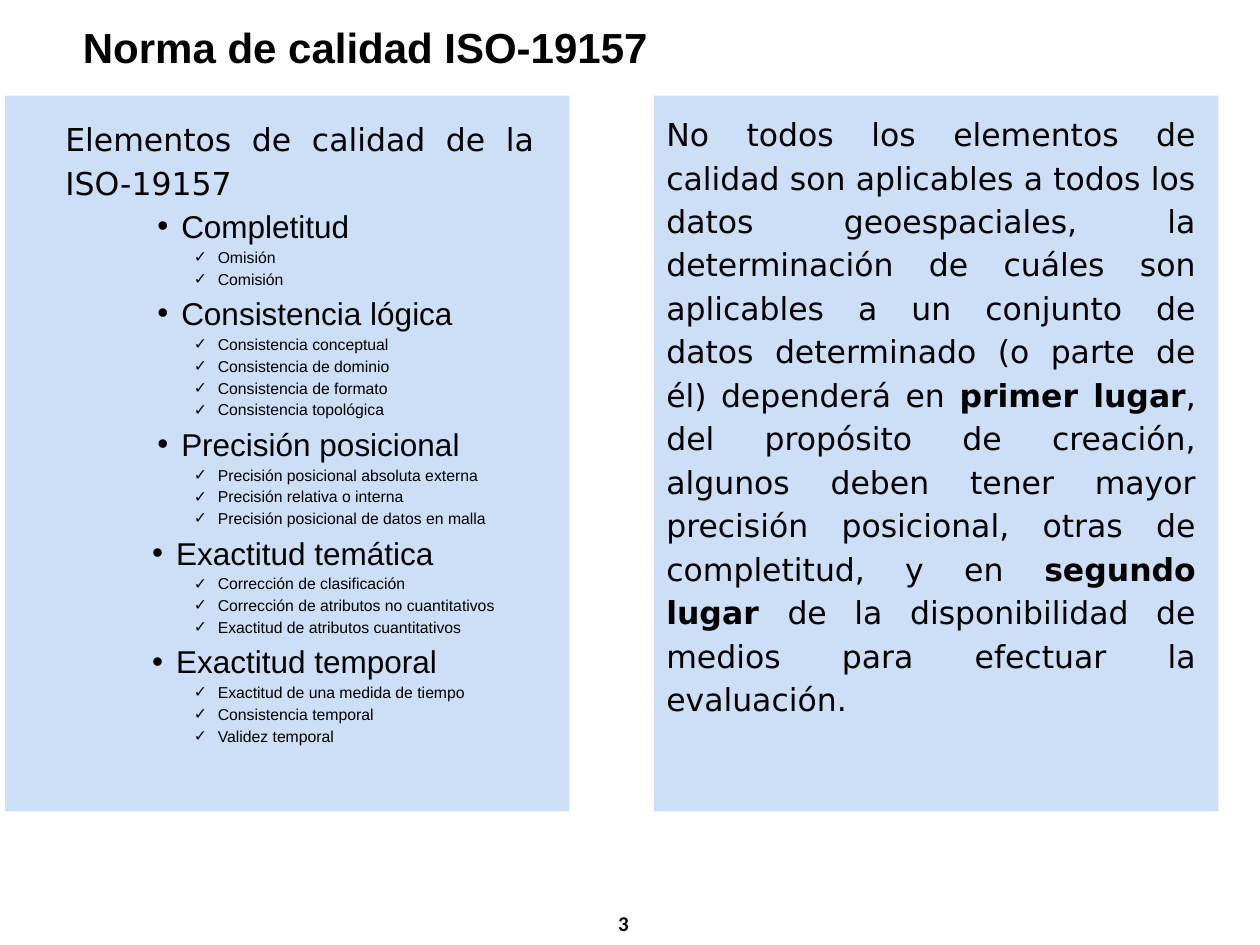
import pptx
import pptx.util
import pptx.dml.color
import pptx.enum.shapes
import pptx.enum.text
import lxml.etree
from pptx.oxml.ns import qn

Inches = pptx.util.Inches
Align = pptx.enum.text.PP_ALIGN
AutoSize = pptx.enum.text.MSO_AUTO_SIZE

theme = {
    "panel": pptx.dml.color.RGBColor.from_string("CDDEF7"),
    "text": pptx.dml.color.RGBColor.from_string("000000"),
    "heading_font": "Arial",
    "body_font": "DejaVu Sans",
    "number_font": "Calibri",
    "title_size": 24,
    "body_size": 18,
    "detail_size": 9,
    "number_size": 12,
    "line_spacing": 1.15,
}

presentation = pptx.Presentation()
presentation.slide_width = Inches(10)
presentation.slide_height = Inches(7.5)
slide_width, slide_height = presentation.slide_width, presentation.slide_height
slide = presentation.slides.add_slide(presentation.slide_layouts[6])


def add_text_frame(left, top, width, height, wrap=True, auto_size=AutoSize.SHAPE_TO_FIT_TEXT):
    box = slide.shapes.add_textbox(
        int(left * slide_width), int(top * slide_height),
        int(width * slide_width), int(height * slide_height))
    box.text_frame.word_wrap = wrap
    box.text_frame.auto_size = auto_size
    return box.text_frame


def format_paragraph(paragraph, font, size, align, bold=False, spacing=None, bullet=None, indent=0):
    paragraph.alignment = align
    if spacing:
        paragraph.line_spacing = spacing
    if bullet:
        properties = paragraph._p.get_or_add_pPr()
        properties.set("marL", str(Inches(indent)))
        properties.set("indent", str(Inches(-0.19)))
        lxml.etree.SubElement(properties, qn("a:buFont")).set("typeface", theme["heading_font"])
        lxml.etree.SubElement(properties, qn("a:buChar")).set("char", bullet)
    paragraph.font.name = font
    paragraph.font.size = pptx.util.Pt(size)
    paragraph.font.bold = bold
    paragraph.font.color.rgb = theme["text"]


number_frame = add_text_frame(0.453, 0.953, 0.056, 0.047, auto_size=AutoSize.NONE)
number_frame.vertical_anchor = pptx.enum.text.MSO_ANCHOR.MIDDLE
number_frame.text = "3"
format_paragraph(number_frame.paragraphs[0], theme["number_font"], theme["number_size"],
                 Align.RIGHT, bold=True)

for panel_left in (0.004, 0.519):
    panel = slide.shapes.add_shape(
        pptx.enum.shapes.MSO_SHAPE.RECTANGLE,
        int(panel_left * slide_width), int(0.1013 * slide_height),
        int(0.448 * slide_width), int(0.7573 * slide_height))
    panel.shadow.inherit = False
    panel.fill.solid()
    panel.fill.fore_color.rgb = theme["panel"]
    panel.line.fill.background()

title_frame = add_text_frame(0.056, 0.016, 0.473, 0.067, wrap=False)
title_frame.text = "Norma de calidad ISO-19157"
format_paragraph(title_frame.paragraphs[0], theme["heading_font"], theme["title_size"],
                 Align.LEFT, bold=True)

quality_elements = [
    ("Completitud", 0.92, ["Omisión", "Comisión"]),
    ("Consistencia lógica", 0.92, [
        "Consistencia conceptual", "Consistencia de dominio",
        "Consistencia de formato", "Consistencia topológica"]),
    ("Precisión posicional", 0.92, [
        "Precisión posicional absoluta externa", "Precisión relativa o interna",
        "Precisión posicional de datos en malla"]),
    ("Exactitud temática", 0.88, [
        "Corrección de clasificación", "Corrección de atributos no cuantitativos",
        "Exactitud de atributos cuantitativos"]),
    ("Exactitud temporal", 0.88, [
        "Exactitud de una medida de tiempo", "Consistencia temporal", "Validez temporal"]),
]

elements_frame = add_text_frame(0.042, 0.1147, 0.392, 0.6853)
elements_frame.text = "Elementos de calidad de la ISO-19157"
format_paragraph(elements_frame.paragraphs[0], theme["body_font"], theme["body_size"],
                 Align.JUSTIFY, spacing=theme["line_spacing"])
for element, element_indent, details in quality_elements:
    rows = [(element, theme["body_size"], "•", element_indent, 1)]
    rows += [(detail, theme["detail_size"], "✓", 1.21, 2) for detail in details]
    for text, size, bullet, indent, level in rows:
        paragraph = elements_frame.add_paragraph()
        paragraph.text = text
        paragraph.level = level
        format_paragraph(paragraph, theme["heading_font"], size, Align.JUSTIFY,
                         spacing=theme["line_spacing"], bullet=bullet, indent=indent)

explanation = [
    ("No todos los elementos de calidad son aplicables a todos los datos geoespaciales, "
     "la determinación de cuáles son aplicables a un conjunto de datos determinado "
     "(o parte de él) dependerá en ", False),
    ("primer lugar", True),
    (", del propósito de creación, algunos deben tener mayor precisión posicional, "
     "otras de completitud, y en ", False),
    ("segundo lugar ", True),
    ("de la disponibilidad de medios para efectuar la evaluación.", False),
]

explanation_frame = add_text_frame(0.519, 0.1093, 0.44, 0.7053)
paragraph = explanation_frame.paragraphs[0]
format_paragraph(paragraph, theme["body_font"], theme["body_size"], Align.JUSTIFY,
                 spacing=theme["line_spacing"])
for text, bold in explanation:
    run = paragraph.add_run()
    run.text = text
    run.font.bold = bold

presentation.save("out.pptx")
